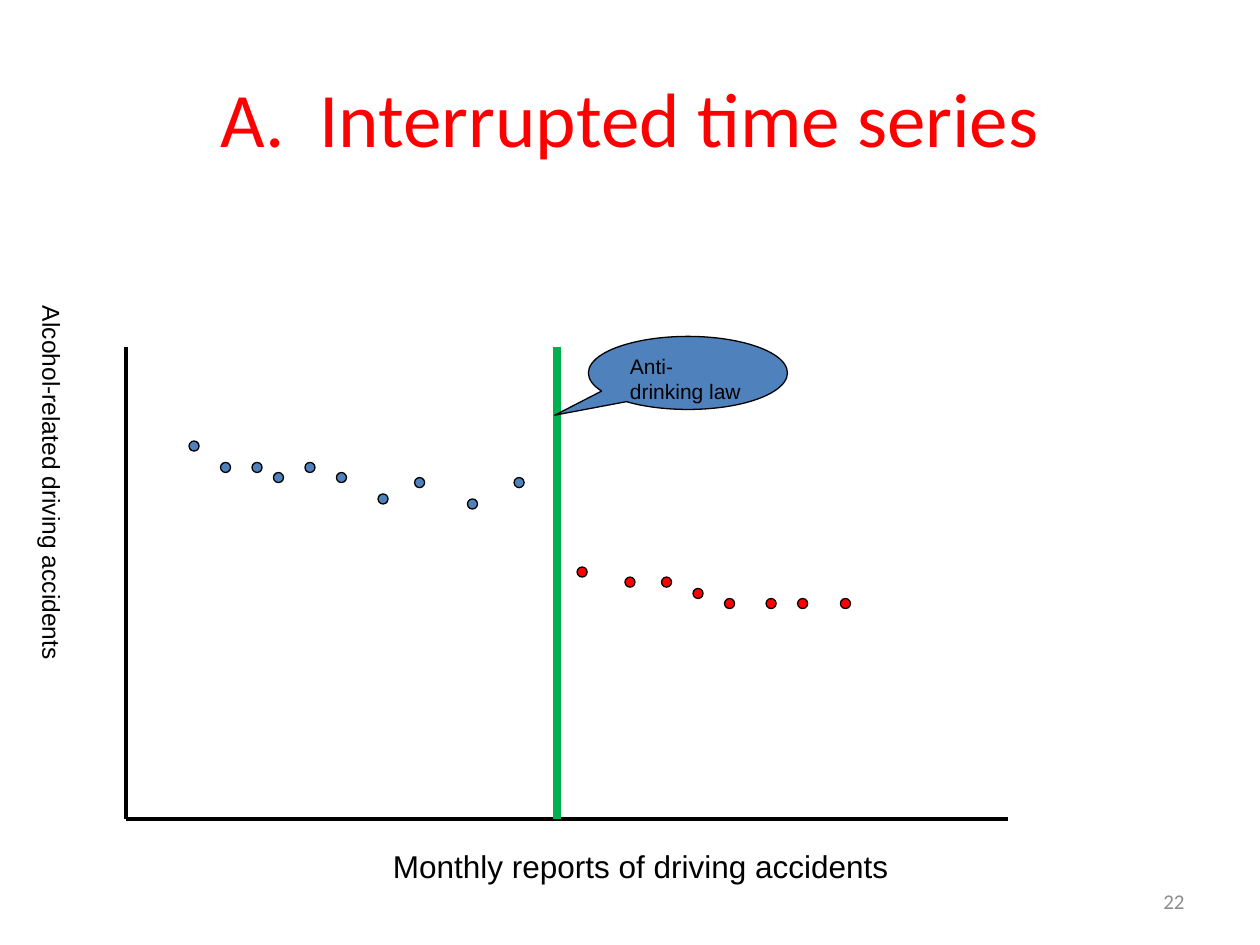
from dataclasses import dataclass

from pptx import Presentation
from pptx.dml.color import RGBColor
from pptx.enum.shapes import MSO_CONNECTOR, MSO_SHAPE
from pptx.enum.text import MSO_ANCHOR, PP_ALIGN
from pptx.oxml.ns import qn
from pptx.util import Inches, Pt
from lxml import etree

DOT = MSO_SHAPE.FLOWCHART_CONNECTOR
CALLOUT = MSO_SHAPE.OVAL_CALLOUT
STRAIGHT = MSO_CONNECTOR.STRAIGHT
LEFT, CENTER, RIGHT = PP_ALIGN.LEFT, PP_ALIGN.CENTER, PP_ALIGN.RIGHT
TOP, MIDDLE = MSO_ANCHOR.TOP, MSO_ANCHOR.MIDDLE


@dataclass(frozen=True)
class Theme:
    black: str = "000000"
    blue: str = "4F81BD"
    red: str = "FF0000"
    green: str = "00B050"
    gray: str = "8C8C8C"
    head: str = "Calibri"
    body: str = "Arial"
    title: int = 44
    label: int = 18
    side: int = 14
    small: int = 12


THEME = Theme()
DOT_SIZE = 0.08
BEFORE = [(1.5, 3.5), (1.75, 3.67), (2, 3.67), (2.17, 3.75), (2.42, 3.67),
          (2.67, 3.75), (3, 3.92), (3.29, 3.79), (3.71, 3.96), (4.08, 3.79)]
AFTER = [(4.58, 4.5), (4.96, 4.58), (5.25, 4.58), (5.5, 4.67),
         (5.75, 4.75), (6.08, 4.75), (6.33, 4.75), (6.67, 4.75)]


def color(code):
    return RGBColor.from_string(code)


def write(shape, text, size, font, tint=THEME.black, align=LEFT, anchor=TOP):
    frame = shape.text_frame
    frame.word_wrap = True
    frame.vertical_anchor = anchor
    para = frame.paragraphs[0]
    para.text = text
    para.alignment = align
    para.font.size = Pt(size)
    para.font.name = font
    para.font.color.rgb = color(tint)


def add_title(slide, text):
    title = slide.shapes.title
    title.left, title.top = Inches(0.5), Inches(0.3)
    title.width, title.height = Inches(9), Inches(1.25)
    write(title, text, THEME.title, THEME.head, THEME.red, CENTER, MIDDLE)


def add_label(slide, box, text, size, font=THEME.body, **style):
    label = slide.shapes.add_textbox(*map(Inches, box))
    write(label, text, size, font, **style)
    return label


def add_line(slide, start, end, tint, width):
    ends = map(Inches, (*start, *end))
    line = slide.shapes.add_connector(STRAIGHT, *ends)
    line.line.color.rgb = color(tint)
    line.line.width = Pt(width)
    etree.SubElement(line._element.spPr, qn("a:effectLst"))


def add_shape(slide, kind, box, fill):
    shape = slide.shapes.add_shape(kind, *map(Inches, box))
    shape.shadow.inherit = False
    shape.fill.solid()
    shape.fill.fore_color.rgb = color(fill)
    shape.line.color.rgb = color(THEME.black)
    shape.line.width = Pt(0.75)
    return shape


def add_dots(slide, points, fill):
    for x, y in points:
        add_shape(slide, DOT, (x, y, DOT_SIZE, DOT_SIZE), fill)


def add_callout(slide, box, text):
    bubble = add_shape(slide, CALLOUT, box, THEME.blue)
    bubble.adjustments[0] = -0.669
    bubble.adjustments[1] = 0.578
    write(bubble, text, THEME.small, THEME.body)


def main():
    deck = Presentation()
    deck.slide_width, deck.slide_height = Inches(10), Inches(7.5)
    slide = deck.slides.add_slide(deck.slide_layouts[5])

    add_title(slide, "A.  Interrupted time series")
    add_label(slide, (7.17, 6.95, 2.33, 0.4), "22", THEME.small, THEME.head,
              tint=THEME.gray, align=RIGHT, anchor=MIDDLE)

    origin = (1, 6.5)
    add_line(slide, (1, 2.75), origin, THEME.black, 2.25)
    add_line(slide, origin, (8, 6.5), THEME.black, 2.25)
    add_dots(slide, BEFORE, THEME.blue)
    add_dots(slide, AFTER, THEME.red)
    add_line(slide, (4.42, 2.75), (4.42, 6.5), THEME.green, 4.5)
    add_callout(slide, (4.67, 2.67, 1.58, 0.58), "Anti-drinking law")

    side = add_label(slide, (0.25, 2.33, 0.33, 3.33),
                     "Alcohol-related driving accidents", THEME.side)
    side.text_frame._txBody.bodyPr.set("vert", "vert")
    add_label(slide, (1.33, 6.67, 7.58, 0.33),
              "Monthly reports of driving accidents ", THEME.label,
              align=CENTER)
    deck.save("out.pptx")


if __name__ == "__main__":
    main()
